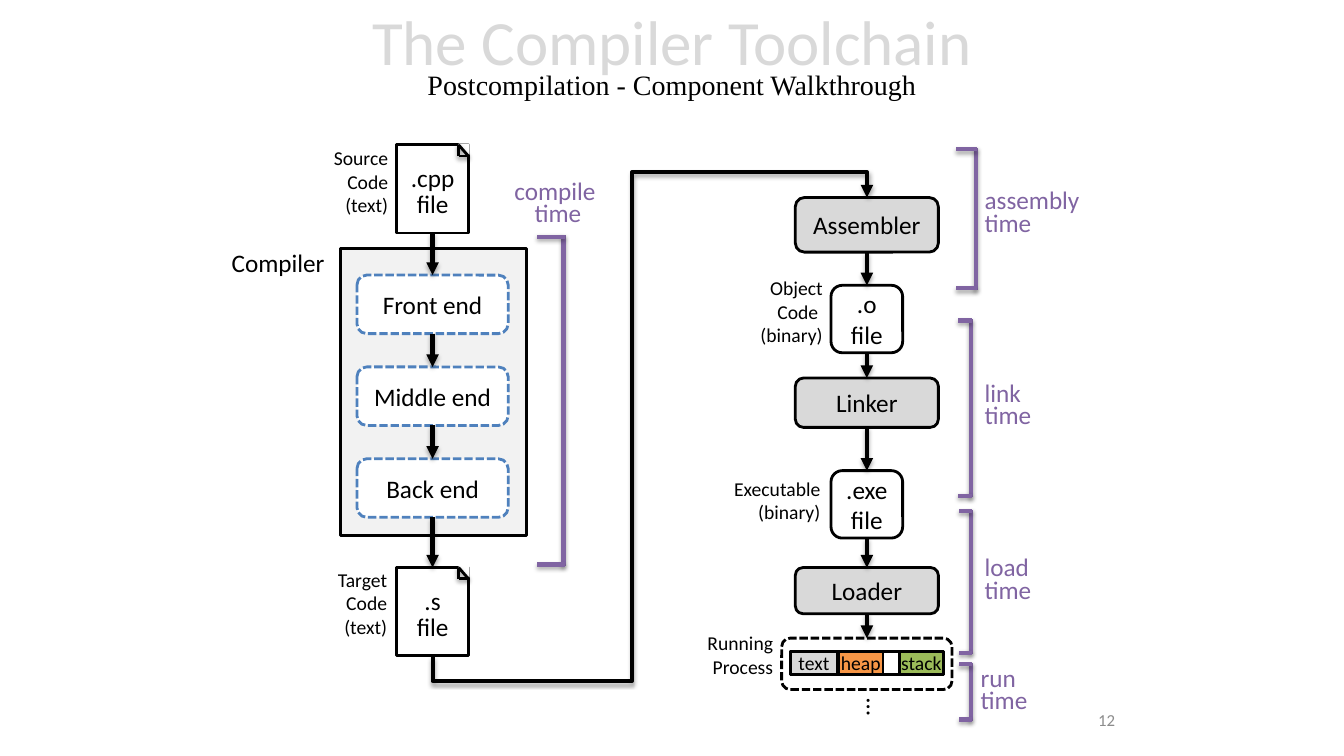
"""Build the compiler toolchain slide."""
from dataclasses import dataclass
from itertools import pairwise

from lxml.etree import SubElement
from pptx import Presentation
from pptx.dml.color import RGBColor
from pptx.enum.dml import MSO_LINE
from pptx.enum.shapes import MSO_CONNECTOR, MSO_SHAPE
from pptx.enum.text import MSO_ANCHOR, MSO_AUTO_SIZE, PP_ALIGN
from pptx.oxml.ns import qn
from pptx.shapes.autoshape import Shape
from pptx.shapes.connector import Connector
from pptx.slide import Slide
from pptx.text.text import TextFrame
from pptx.util import Pt

COLOURS = {
    "black": "000000", "white": "FFFFFF", "panel": "F2F2F2", "grey": "D9D9D9",
    "blue": "4F81BD", "purple": "8064A2", "green": "9BBB59", "orange": "F79646",
    "number": "8C8C8C",
}
SANS, SERIF = "Calibri", "Times New Roman"
LEFT_AXIS, RIGHT_AXIS = 309, 619.2
PAGE_WIDTH, PAGE_HEIGHT, FOLD = 51.2, 63, 7
PHASE_TOP, PHASE_STEP = 196.5, 65.6


@dataclass(frozen=True)
class Box:
    text: str
    centre: float
    top: float
    width: float
    height: float
    fill: str = "white"
    line: str = "black"
    dashed: bool = False
    kind: MSO_SHAPE = MSO_SHAPE.ROUNDED_RECTANGLE
    size: float = 18
    side_inset: float = 7.2


@dataclass(frozen=True)
class Label:
    text: str
    left: float
    top: float
    width: float
    height: float
    size: float = 14
    align: PP_ALIGN = PP_ALIGN.RIGHT
    colour: str = "black"
    spacing: float | None = None
    rotation: float = 0


@dataclass(frozen=True)
class Bracket:
    arm: float
    spine: float
    top: float
    bottom: float
    label: Label


def time_label(text: str, left: float, top: float, width: float,
               align: PP_ALIGN = PP_ALIGN.LEFT) -> Label:
    """Describe the purple name of a time span."""
    return Label(text, left, top, width, 40.3, 18, align, "purple", 16)


def page_label(text: str, page_top: float) -> Label:
    """Describe the file name written on a page."""
    return Label(text, LEFT_AXIS - 23, page_top + 12, 46, 45.4, 18, PP_ALIGN.CENTER, spacing=18.6)


PAGE_TOPS = {".cpp\nfile": 103.5, ".s\nfile": 405.4}
COMPILER = Box("", 309.6, 177.8, 132.5, 204.5, "panel", kind=MSO_SHAPE.RECTANGLE)
PAGES = [Box("", LEFT_AXIS, top, PAGE_WIDTH, PAGE_HEIGHT, kind=MSO_SHAPE.RECTANGLE)
         for top in PAGE_TOPS.values()]
PHASES = [Box(f"{name} end", LEFT_AXIS, PHASE_TOP + PHASE_STEP * row, 108, 41.8, line="blue", dashed=True)
          for row, name in enumerate(("Front", "Middle", "Back"))]
STAGES = [
    Box("Assembler", RIGHT_AXIS, 141.1, 102.2, 39, "grey"),
    Box(".o\nfile", RIGHT_AXIS, 203.8, 51.2, 48.2),
    Box("Linker", RIGHT_AXIS, 270, 102.2, 35.3, "grey"),
    Box(".exe\nfile", RIGHT_AXIS, 336.2, 51.2, 48.2),
    Box("Loader", RIGHT_AXIS, 405.4, 102.2, 33, "grey"),
    Box("", RIGHT_AXIS, 455.8, 121.7, 36.7, dashed=True),
]
SEGMENTS = [
    Box(text, centre, 465.1, width, 16.9, fill, kind=MSO_SHAPE.RECTANGLE, size=14, side_inset=0)
    for text, centre, width, fill in (
        ("", RIGHT_AXIS, 109.4, "white"), ("stack", 658.1, 31.7, "green"),
        ("text", 581.4, 33.8, "grey"), ("heap", 614.9, 31.7, "orange"))
]
LABELS = [
    Label("Source\nCode\n(text)", 230.4, 100.8, 54, 58.3),
    Label("Target\nCode\n(text)", 233.3, 401.8, 50.4, 58.3),
    Label("Compiler", 158.4, 172.8, 81.4, 28.8, 18, PP_ALIGN.LEFT),
    Label("Object\nCode \n(binary)", 535, 193.7, 59.8, 58.3),
    Label("Executable\n(binary)", 516.2, 337, 77, 41),
    Label("Running\nProcess", 497.5, 447.1, 61.9, 41),
    Label("…", 612.7, 491, 27.4, 28.8, 18, PP_ALIGN.LEFT, rotation=90),
    Label("12", 635.8, 503.5, 167.8, 22.6, 12, colour="number"),
] + [page_label(text, top) for text, top in PAGE_TOPS.items()]
BRACKETS = [
    Bracket(383.4, 402.5, 169.2, 403.2, time_label("compile \ntime", 360, 127.4, 77, PP_ALIGN.CENTER)),
    Bracket(682.6, 697, 106.6, 206, time_label("assembly\ntime", 696.2, 133.9, 87.1)),
    Bracket(684, 693.4, 229, 354.2, time_label("link\ntime", 696.2, 271.4, 48.2)),
    Bracket(684.7, 693.4, 365, 466.2, time_label("load\ntime", 696.2, 396, 51.1)),
    Bracket(684.7, 693.4, 474.5, 514, time_label("run\ntime", 693.4, 475.2, 48.2)),
]


def rgb(name: str) -> RGBColor:
    """Look up a named colour."""
    return RGBColor.from_string(COLOURS[name])


def write(frame: TextFrame, text: str, size: float, colour: str, align: PP_ALIGN,
          spacing: float | None = None) -> None:
    """Write one paragraph per line of text."""
    for row, line in enumerate(text.split("\n")):
        para = frame.add_paragraph() if row else frame.paragraphs[0]
        para.alignment = align
        if spacing:
            para.line_spacing = Pt(spacing)
        span = para.add_run()
        span.text = line
        span.font.name, span.font.size = SANS, Pt(size)
        span.font.color.rgb = rgb(colour)


def draw_box(page: Slide, box: Box) -> Shape:
    """Draw a filled box with its centred text."""
    shape = page.shapes.add_shape(box.kind, Pt(box.centre - box.width / 2), Pt(box.top),
                                  Pt(box.width), Pt(box.height))
    shape.shadow.inherit = False
    shape.fill.solid()
    shape.fill.fore_color.rgb = rgb(box.fill)
    shape.line.color.rgb = rgb(box.line)
    shape.line.width = Pt(2)
    if box.dashed:
        shape.line.dash_style = MSO_LINE.SQUARE_DOT
    frame = shape.text_frame
    frame.vertical_anchor = MSO_ANCHOR.MIDDLE
    frame.margin_left = frame.margin_right = Pt(box.side_inset)
    if box.text:
        write(frame, box.text, box.size, "black", PP_ALIGN.CENTER)
    return shape


def draw_label(page: Slide, label: Label) -> None:
    """Draw free-standing text."""
    box = page.shapes.add_textbox(Pt(label.left), Pt(label.top), Pt(label.width), Pt(label.height))
    box.rotation = label.rotation
    box.text_frame.word_wrap = False
    write(box.text_frame, label.text, label.size, label.colour, label.align, label.spacing)


def draw_line(page: Slide, start: tuple[float, float], end: tuple[float, float], colour: str = "black",
              width: float = 3, arrow: bool = False, kind: MSO_CONNECTOR = MSO_CONNECTOR.STRAIGHT) -> Connector:
    """Draw a line with a soft shadow below it."""
    line = page.shapes.add_connector(kind, *(Pt(value) for value in start + end))
    line.line.color.rgb = rgb(colour)
    line.line.width = Pt(width)
    if arrow:
        SubElement(line.line._get_or_add_ln(), qn("a:tailEnd"), type="triangle")
    effects = SubElement(line._element.spPr, qn("a:effectLst"))
    shadow = SubElement(effects, qn("a:outerShdw"), blurRad=str(Pt(3.1)), dist=str(Pt(1.8)),
                        dir="5400000", rotWithShape="0")
    tint = SubElement(shadow, qn("a:srgbClr"), val=COLOURS["black"])
    SubElement(tint, qn("a:alpha"), val="35000")
    return line


def draw_chain(page: Slide, shapes: list[Shape]) -> None:
    """Join each shape to the next one below it."""
    for upper, lower in pairwise(shapes):
        arrow = draw_line(page, (0, 0), (1, 1), arrow=True)
        arrow.begin_connect(upper, 2)
        arrow.end_connect(lower, 0)


def draw_fold(page: Slide, sheet: Box) -> None:
    """Draw the folded corner of a page."""
    right, top = sheet.centre + sheet.width / 2, sheet.top
    patch = page.shapes.add_shape(MSO_SHAPE.RECTANGLE, Pt(right - FOLD), Pt(top - 1), Pt(FOLD + 1), Pt(FOLD + 1))
    patch.shadow.inherit = False
    patch.fill.solid()
    patch.fill.fore_color.rgb = rgb("white")
    patch.line.fill.background()
    corners = [(right - FOLD, top), (right - FOLD, top + FOLD + 1), (right, top + FOLD + 1)]
    for start, end in pairwise(corners + corners[:1]):
        draw_line(page, start, end, width=2)


def draw_bracket(page: Slide, bracket: Bracket) -> None:
    """Draw a time span and its name."""
    draw_line(page, (bracket.spine, bracket.top - 1), (bracket.spine, bracket.bottom + 1), "purple")
    for height in (bracket.top, bracket.bottom):
        draw_line(page, (bracket.spine + 1, height), (bracket.arm, height), "purple")
    draw_label(page, bracket.label)


def draw_detour(page: Slide, source: Box, target: Box) -> None:
    """Lead from under the target code up and over to the assembler."""
    bottom = source.top + source.height
    rise, run = bottom - target.top, target.centre - source.centre
    middle_x, middle_y = (source.centre + target.centre) / 2, (bottom + target.top) / 2
    link = draw_line(page, (middle_x + rise / 2, middle_y + run / 2),
                     (middle_x - rise / 2, middle_y - run / 2), arrow=True, kind=MSO_CONNECTOR.ELBOW)
    link._element.spPr.xfrm.set("rot", "5400000")
    outline = link._element.spPr.find(qn("a:prstGeom"))
    outline.set("prst", "bentConnector5")
    guides = outline.find(qn("a:avLst"))
    for number, value in enumerate((-5500, 45900, 105500), 1):
        SubElement(guides, qn("a:gd"), name=f"adj{number}", fmla=f"val {value}")


def draw_title(page: Slide) -> None:
    """Fill the title with its heading and subheading."""
    title = page.shapes.title
    title.left, title.top, title.width, title.height = Pt(120), Pt(0), Pt(720), Pt(88.3)
    frame = title.text_frame
    frame.auto_size, frame.vertical_anchor = MSO_AUTO_SIZE.NONE, MSO_ANCHOR.MIDDLE
    write(frame, "The Compiler Toolchain", 45, "grey", PP_ALIGN.CENTER)
    para = frame.add_paragraph()
    para.alignment = PP_ALIGN.CENTER
    span = para.add_run()
    span.text = "Postcompilation - Component Walkthrough"
    span.font.name, span.font.size, span.font.color.rgb = SERIF, Pt(20), rgb("black")
    for line in frame.paragraphs:
        line.line_spacing = 0.7


def main() -> None:
    """Build and save the deck."""
    deck = Presentation()
    deck.slide_width, deck.slide_height = Pt(960), Pt(540)
    page = deck.slides.add_slide(deck.slide_layouts[5])
    draw_title(page)
    draw_box(page, COMPILER)
    source, target = (draw_box(page, sheet) for sheet in PAGES)
    for sheet in PAGES:
        draw_fold(page, sheet)
    draw_chain(page, [source, *(draw_box(page, phase) for phase in PHASES), target])
    draw_chain(page, [draw_box(page, stage) for stage in STAGES])
    for segment in SEGMENTS:
        draw_box(page, segment)
    draw_detour(page, PAGES[1], STAGES[0])
    for label in LABELS:
        draw_label(page, label)
    for bracket in BRACKETS:
        draw_bracket(page, bracket)
    deck.save("out.pptx")


if __name__ == "__main__":
    main()
